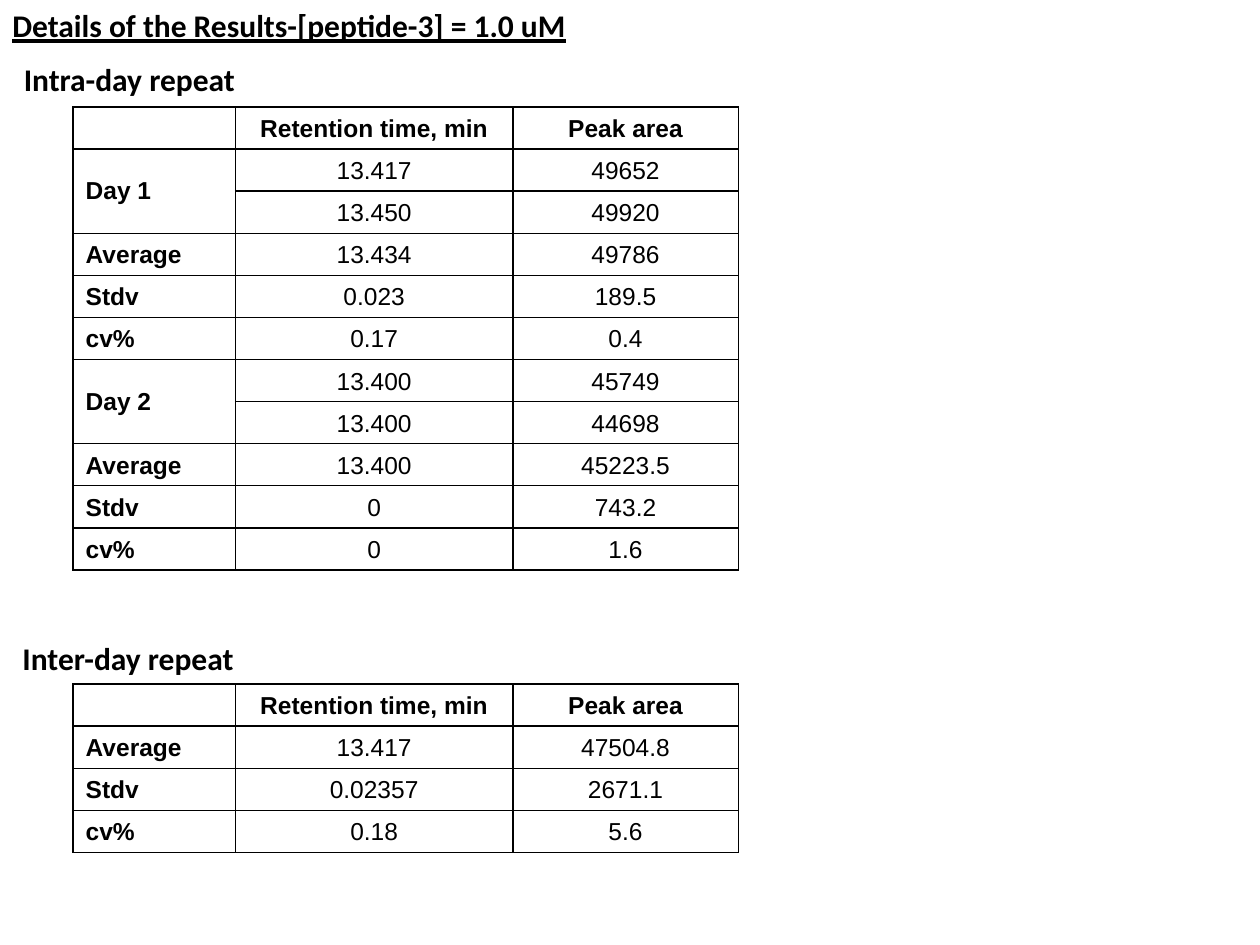
from lxml import etree
from pptx import Presentation
from pptx.dml.color import RGBColor
from pptx.enum.text import MSO_ANCHOR, MSO_AUTO_SIZE, PP_ALIGN
from pptx.oxml.ns import qn
from pptx.util import Inches, Pt

COLORS = {"ink": "000000", "paper": "FFFFFF"}
COLUMN_WIDTHS = [1.29, 2.2, 1.79]
HEADER = ["", "Retention time, min", "Peak area"]
BORDER_TAGS = ["a:lnL", "a:lnR", "a:lnT", "a:lnB"]


def write_text(frame, text, size=14, font="Arial", bold=False, underline=False,
               align=PP_ALIGN.LEFT):
    para = frame.paragraphs[0]
    para.alignment = align
    if not text:
        # An empty cell keeps the table's text size, so its row does not grow
        etree.SubElement(para._p, qn("a:endParaRPr"), sz=str(size * 100))
        return
    span = para.add_run()
    span.text = text
    span.font.size = Pt(size)
    span.font.name = font
    span.font.bold = bold
    span.font.underline = underline
    span.font.color.rgb = RGBColor.from_string(COLORS["ink"])


def style_cell(cell):
    cell.fill.solid()
    cell.fill.fore_color.rgb = RGBColor.from_string(COLORS["paper"])
    properties = cell._tc.get_or_add_tcPr()
    for index, tag in enumerate(BORDER_TAGS):
        line = etree.Element(qn(tag), w=str(Pt(1)))
        fill = etree.SubElement(line, qn("a:solidFill"))
        etree.SubElement(fill, qn("a:srgbClr"), val=COLORS["ink"])
        properties.insert(index, line)


deck = Presentation()
deck.slide_width = Inches(10)
deck.slide_height = Inches(7.5)
page = deck.slides.add_slide(deck.slide_layouts[6])

# Title and section headings: text, left, top, width, underline
headings = [
    ("Details of the Results-[peptide-3] = 1.0 uM", 0, 0, 4.64, True),
    ("Intra-day repeat", 0.09, 0.43, 2.08, False),
    ("Inter-day repeat", 0.08, 5.02, 2.08, False),
]
for text, left, top, width, underline in headings:
    box = page.shapes.add_textbox(Inches(left), Inches(top), Inches(width), Inches(0.4))
    box.text_frame.word_wrap = False
    box.text_frame.auto_size = MSO_AUTO_SIZE.SHAPE_TO_FIT_TEXT
    write_text(box.text_frame, text, size=18, font="Calibri", bold=True,
               underline=underline)

# Result tables; a row without a label joins the label above it
intra_day = [
    HEADER,
    ["Day 1", "13.417", "49652"],
    ["", "13.450", "49920"],
    ["Average", "13.434", "49786"],
    ["Stdv", "0.023", "189.5"],
    ["cv%", "0.17", "0.4"],
    ["Day 2", "13.400", "45749"],
    ["", "13.400", "44698"],
    ["Average", "13.400", "45223.5"],
    ["Stdv", "0", "743.2"],
    ["cv%", "0", "1.6"],
]
inter_day = [
    HEADER,
    ["Average", "13.417", "47504.8"],
    ["Stdv", "0.02357", "2671.1"],
    ["cv%", "0.18", "5.6"],
]
for rows, top, height in [(intra_day, 0.85, 3.67), (inter_day, 5.43, 1.33)]:
    table = page.shapes.add_table(
        len(rows), len(HEADER), Inches(0.58), Inches(top),
        Inches(sum(COLUMN_WIDTHS)), Inches(height)).table
    table.first_row = False
    table.horz_banding = False
    for column, width in zip(table.columns, COLUMN_WIDTHS):
        column.width = Inches(width)
    for r, row in enumerate(rows):
        for c, text in enumerate(row):
            cell = table.cell(r, c)
            style_cell(cell)
            cell.vertical_anchor = MSO_ANCHOR.BOTTOM
            write_text(cell.text_frame, text, bold=r == 0 or c == 0,
                       align=PP_ALIGN.CENTER if c else PP_ALIGN.LEFT)
        if r and not row[0]:
            label = table.cell(r - 1, 0)
            label.merge(table.cell(r, 0))
            label.vertical_anchor = MSO_ANCHOR.MIDDLE

deck.save("out.pptx")
